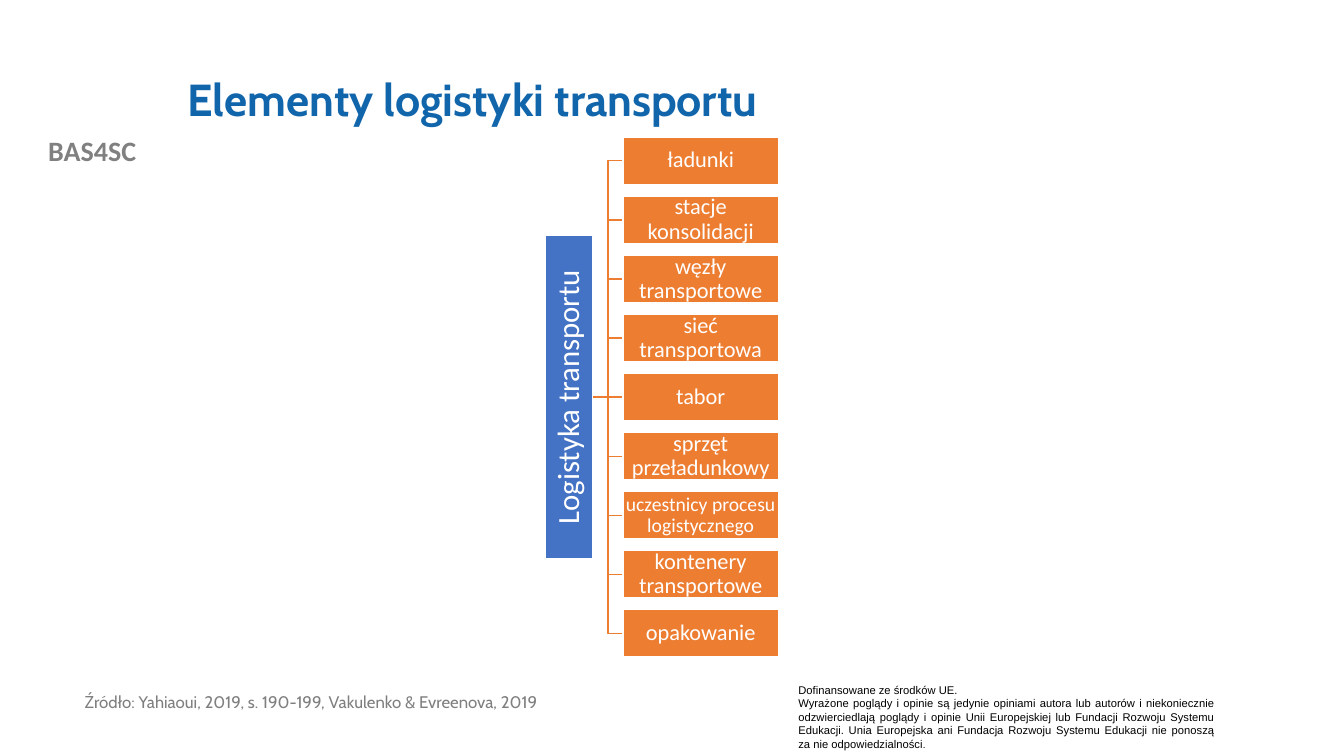
from pptx import Presentation
from pptx.dml.color import RGBColor as Rgb
from pptx.enum.shapes import MSO_CONNECTOR as Conn, MSO_SHAPE as Shape
from pptx.enum.text import MSO_ANCHOR as Anchor, PP_ALIGN as Align
from pptx.oxml.ns import qn
from pptx.util import Inches, Pt
from lxml.etree import SubElement

BLUE, ORANGE, WHITE = "4472C4", "ED7D31", "FFFFFF"
PARTS = ["ładunki", "stacje konsolidacji", "węzły transportowe",
         "sieć transportowa", "tabor", "sprzęt przeładunkowy",
         "uczestnicy procesu logistycznego", "kontenery transportowe",
         "opakowanie"]
NOTICE = ["Dofinansowane ze środków UE.",
          "Wyrażone poglądy i opinie są jedynie opiniami autora lub autorów "
          "i niekoniecznie odzwierciedlają poglądy i opinie Unii Europejskiej "
          "lub Fundacji Rozwoju Systemu Edukacji. Unia Europejska ani Fundacja "
          "Rozwoju Systemu Edukacji nie ponoszą za nie odpowiedzialności"]


def color(code):
    return Rgb.from_string(code)


def style(para, face, size, code, bold=False, align=Align.LEFT, lead=1.0):
    para.alignment = align
    para.line_spacing = lead
    font = para.font
    font.name, font.size, font.bold = face, Pt(size), bold
    font.color.rgb = color(code)


def place(shape, box):
    shape.left, shape.top, shape.width, shape.height = map(Inches, box)


def label(slide, box, lines, *look, **more):
    frame = slide.shapes.add_textbox(*map(Inches, box)).text_frame
    frame.word_wrap = True
    frame.text = "\n".join(lines)
    for para in frame.paragraphs:
        style(para, *look, **more)
    return frame


def heading(slide, box, text):
    title = slide.shapes.title
    place(title, box)
    title.text_frame.vertical_anchor = Anchor.MIDDLE
    title.text_frame.text = text
    style(title.text_frame.paragraphs[0], "Cabin", 32, "1065AB", True, lead=0.9)


def notice(slide, box):
    frame = label(slide, box, NOTICE, "Arial", 8, "000000", align=Align.JUSTIFY)
    stop = frame.paragraphs[-1].add_run()
    stop.text = "."
    stop.font.size = Pt(7)


def block(slide, box, text, size, fill, pad):
    shape = slide.shapes.add_shape(Shape.RECTANGLE, *map(Inches, box))
    shape.shadow.inherit = False
    shape.fill.solid()
    shape.fill.fore_color.rgb = color(fill)
    shape.line.color.rgb = color(WHITE)
    shape.line.width = Pt(1)
    frame = shape.text_frame
    frame.word_wrap = True
    frame.vertical_anchor = Anchor.MIDDLE
    frame.margin_left = frame.margin_right = Inches(pad)
    frame.margin_top = frame.margin_bottom = Inches(pad)
    frame.text = text
    style(frame.paragraphs[0], "Calibri", size, WHITE, align=Align.CENTER, lead=0.9)
    return shape


def link(slide, x1, y1, x2, y2):
    if y1 == y2:
        line = slide.shapes.add_connector(Conn.STRAIGHT, *map(Inches, (x1, y1, x2, y2)))
        SubElement(line._element.spPr, qn("a:effectLst"))
    else:
        mid = (x1 + x2) / 2
        path = slide.shapes.build_freeform(Inches(x1), Inches(y1))
        bends = [(mid, y1), (mid, y2), (x2, y2)]
        path.add_line_segments([(Inches(x), Inches(y)) for x, y in bends], close=False)
        line = path.convert_to_shape()
        line.fill.background()
        line.shadow.inherit = False
    line.line.color.rgb = color(ORANGE)
    line.line.width = Pt(1)


def tree(slide, box, root, parts):
    left, top, width, height = box
    thick, span, wide = 0.47, 3.21, 1.54
    step = (height - thick) / (len(parts) - 1)
    start, edge = left + thick, left + width - wide
    tops = [top + step * i for i in range(len(parts))]
    half = thick / 2
    hub = tops[len(parts) // 2]
    for y in reversed(tops):
        link(slide, start, hub + half, edge, y + half)
    trunk = (left + half - span / 2, hub, span, thick)
    block(slide, trunk, root, 22, BLUE, 0.02).rotation = 270
    for y, text in zip(tops, parts):
        size = 14 if len(text) > 25 else 16
        block(slide, (edge, y, wide, thick), text, size, ORANGE, 0.01)


def main():
    deck = Presentation()
    deck.slide_width, deck.slide_height = Inches(13.33), Inches(7.5)
    slide = deck.slides.add_slide(deck.slide_layouts[5])
    label(slide, (0, 1.28, 1.83, 0.44), ["BAS4SC"], "Calibri", 20, "808080",
          True, align=Align.CENTER)
    notice(slide, (7.82, 6.73, 4.33, 0.77))
    heading(slide, (1.76, 0.4, 10.66, 1.22), "Elementy logistyki transportu")
    label(slide, (0.74, 6.84, 5.6, 0.52),
          ["Źródło: Yahiaoui, 2019, s. 190-199, Vakulenko & Evreenova, 2019"],
          "Cabin", 12, "7F7F7F", lead=0.9)
    tree(slide, (5.41, 1.36, 2.31, 5.16), "Logistyka transportu", PARTS)
    deck.save("out.pptx")


if __name__ == "__main__":
    main()
